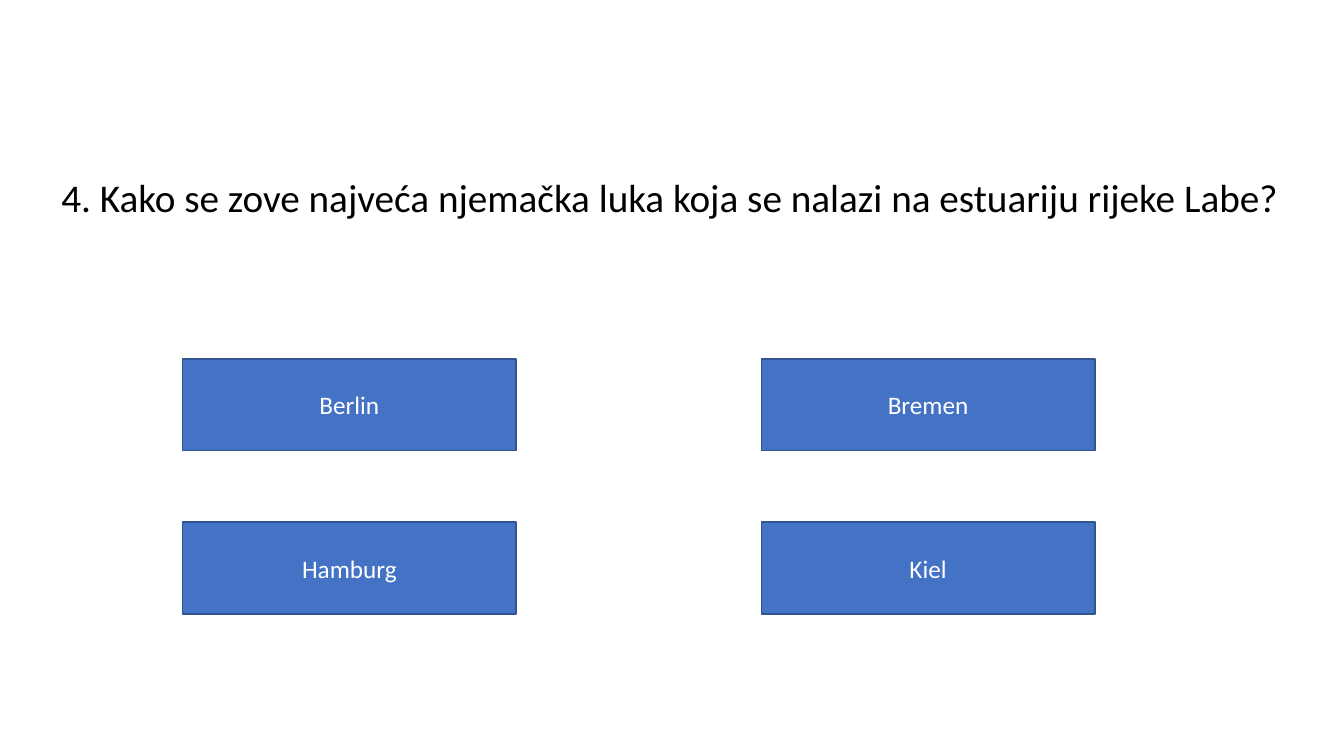
import dataclasses

import pptx
import pptx.dml.color
import pptx.enum.shapes
import pptx.enum.text
import pptx.slide
import pptx.text.text
import pptx.util

Inches = pptx.util.Inches

# Answer grid, in inches
GRID_LEFT, GRID_TOP = 1.81, 3.56
COLUMN_STEP, ROW_STEP = 5.74, 1.62
ANSWER_WIDTH, ANSWER_HEIGHT = 3.31, 0.91


@dataclasses.dataclass(frozen=True)
class Answer:
    text: str
    column: int
    row: int


ANSWERS = [
    Answer("Berlin", 0, 0),
    Answer("Bremen", 1, 0),
    Answer("Hamburg", 0, 1),
    Answer("Kiel", 1, 1),
]


def color(value: str) -> pptx.dml.color.RGBColor:
    return pptx.dml.color.RGBColor.from_string(value)


def write(frame: pptx.text.text.TextFrame, text: str, size: int, ink: str,
          align: pptx.enum.text.PP_ALIGN) -> None:
    para = frame.paragraphs[0]
    para.text = text
    para.alignment = align
    para.font.name = "Calibri"
    para.font.size = pptx.util.Pt(size)
    para.font.color.rgb = color(ink)


def add_question(page: pptx.slide.Slide, text: str) -> None:
    box = page.shapes.add_textbox(Inches(0.51), Inches(1.67), Inches(12.46), Inches(0.57))
    frame = box.text_frame
    frame.word_wrap = True
    frame.auto_size = pptx.enum.text.MSO_AUTO_SIZE.SHAPE_TO_FIT_TEXT
    write(frame, text, 28, "000000", pptx.enum.text.PP_ALIGN.LEFT)


def add_answer(page: pptx.slide.Slide, answer: Answer) -> None:
    box = page.shapes.add_shape(
        pptx.enum.shapes.MSO_SHAPE.RECTANGLE,
        Inches(GRID_LEFT + answer.column * COLUMN_STEP),
        Inches(GRID_TOP + answer.row * ROW_STEP),
        Inches(ANSWER_WIDTH), Inches(ANSWER_HEIGHT))
    box.shadow.inherit = False
    box.fill.solid()
    box.fill.fore_color.rgb = color("4472C4")
    box.line.color.rgb = color("325491")
    box.line.width = pptx.util.Pt(1)
    box.text_frame.vertical_anchor = pptx.enum.text.MSO_ANCHOR.MIDDLE
    write(box.text_frame, answer.text, 18, "FFFFFF", pptx.enum.text.PP_ALIGN.CENTER)


def main() -> None:
    deck = pptx.Presentation()
    deck.slide_width, deck.slide_height = Inches(13.33), Inches(7.5)
    page = deck.slides.add_slide(deck.slide_layouts[6])

    # Question above its four answers
    add_question(page, "4. Kako se zove najveća njemačka luka koja se nalazi na estuariju rijeke Labe?")
    for answer in ANSWERS:
        add_answer(page, answer)

    deck.save("out.pptx")


if __name__ == "__main__":
    main()
